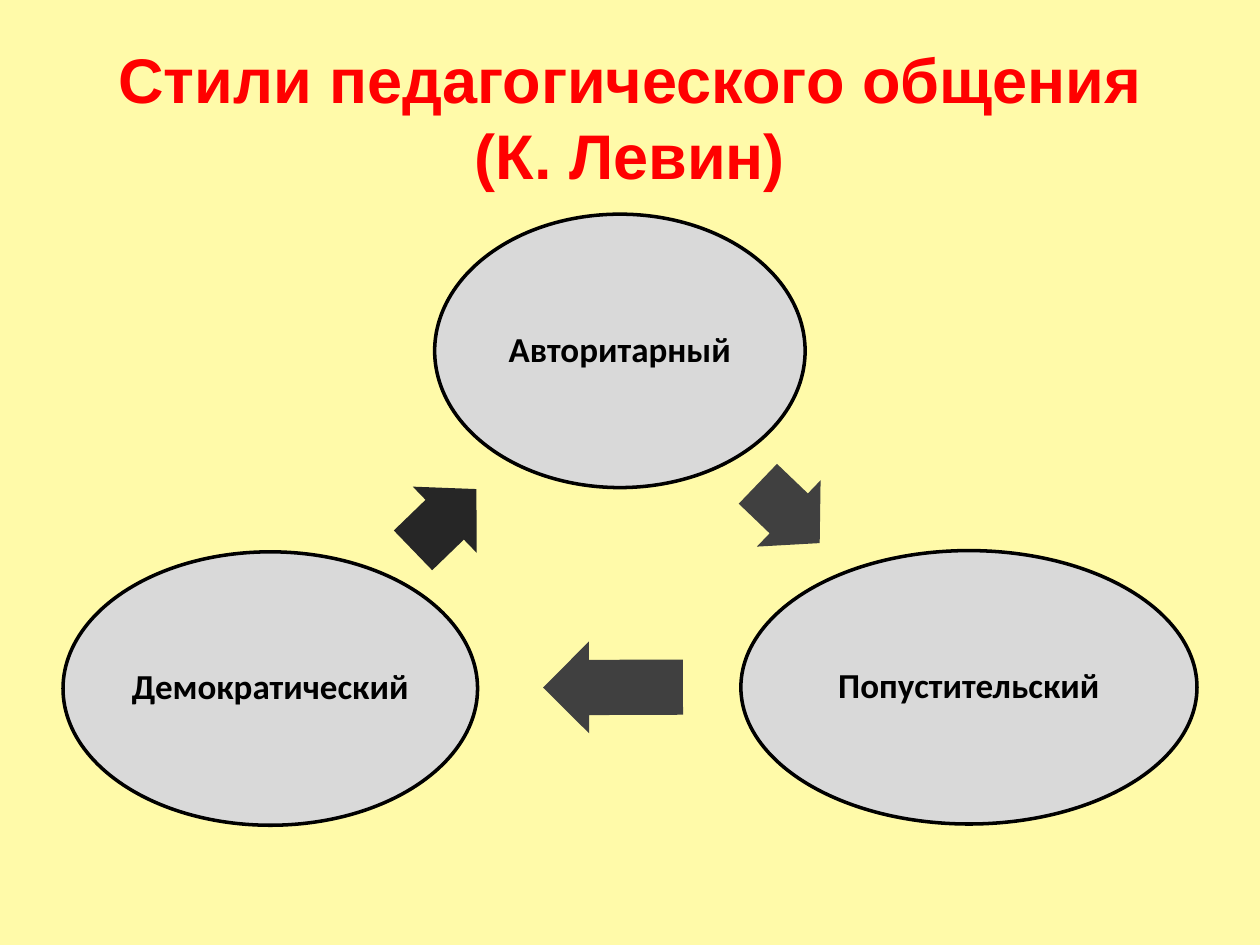
from pptx import Presentation
from pptx.dml.color import RGBColor
from pptx.enum.shapes import MSO_SHAPE as Shape
from pptx.enum.text import MSO_ANCHOR as Anchor, PP_ALIGN as Align
from pptx.util import Inches, Pt


def color(value):
    return RGBColor.from_string(value)


def write(box, text, inset, para_format, font_format, font_color):
    """Fill a shape with one centred paragraph."""
    frame = box.text_frame
    frame.word_wrap = True
    frame.vertical_anchor = Anchor.MIDDLE
    for side, size in inset.items():
        setattr(frame, f"margin_{side}", Inches(size))
    para = frame.paragraphs[0]
    para.alignment = Align.CENTER
    for name, value in para_format.items():
        setattr(para, name, value)
    span = para.add_run()
    span.text = text
    for name, value in font_format.items():
        setattr(span.font, name, value)
    span.font.color.rgb = color(font_color)


deck = Presentation()
deck.slide_width, deck.slide_height = Inches(10), Inches(7.5)
page = deck.slides.add_slide(deck.slide_layouts[6])
page.background.fill.solid()
page.background.fill.fore_color.rgb = color("FFFAA9")

WIDTH, HEIGHT = deck.slide_width, deck.slide_height

title = page.shapes.add_textbox(
    int(WIDTH * 0.05), int(HEIGHT * 0.04), int(WIDTH * 0.9), Inches(1.25))
write(title, "Стили педагогического общения (К. Левин)",
      {"left": 0.1, "right": 0.1, "top": 0.05, "bottom": 0.05}, {},
      {"name": "Arial", "size": Pt(36), "bold": True}, "FF0000")

# Styles: name, left, top, width
STYLE_HEIGHT = 2.17
styles = [
    ("Авторитарный", 3.45, 1.7, 2.94),
    ("Попустительский", 5.88, 4.37, 3.62),
    ("Демократический", 0.5, 4.38, 3.29),
]
for name, left, top, width in styles:
    oval = page.shapes.add_shape(
        Shape.OVAL, Inches(left), Inches(top), Inches(width), Inches(STYLE_HEIGHT))
    oval.shadow.inherit = False
    oval.fill.solid()
    oval.fill.fore_color.rgb = color("D9D9D9")
    oval.line.color.rgb = color("000000")
    oval.line.width = Pt(2)
    write(oval, name, dict.fromkeys(("left", "right", "top", "bottom"), 0.03),
          {"line_spacing": 0.9},
          {"name": "Calibri", "size": Pt(20), "bold": True}, "000000")

# Arrows of the cycle: left, top, width, rotation, fill
ARROW_HEIGHT = 0.73
arrows = [
    (5.92, 3.71, 0.68, 43.8, "404040"),
    (4.31, 5.09, 1.11, 179.8, "404040"),
    (3.18, 3.76, 0.7, 316, "262626"),
]
for left, top, width, rotation, fill in arrows:
    arrow = page.shapes.add_shape(
        Shape.RIGHT_ARROW, Inches(left), Inches(top), Inches(width), Inches(ARROW_HEIGHT))
    arrow.shadow.inherit = False
    arrow.adjustments[0], arrow.adjustments[1] = 0.6, 0.5
    arrow.rotation = rotation
    arrow.fill.solid()
    arrow.fill.fore_color.rgb = color(fill)
    arrow.line.fill.background()

deck.save("out.pptx")
